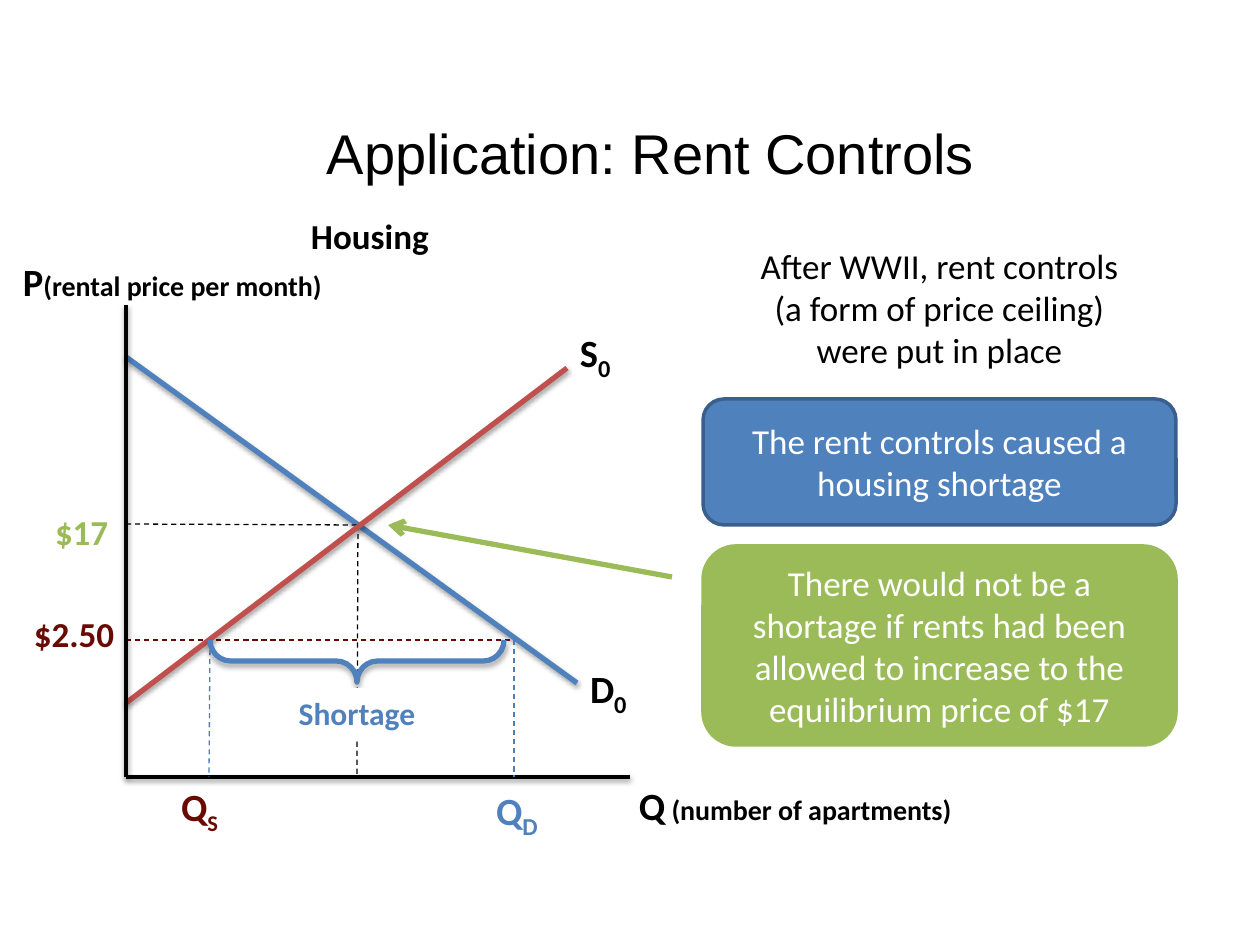
"""Build a slide on rent controls with a supply and demand diagram."""
from lxml.etree import SubElement
from pptx import Presentation
from pptx.dml.color import RGBColor
from pptx.enum.dml import MSO_LINE_DASH_STYLE as Dash
from pptx.enum.shapes import MSO_CONNECTOR as Link, MSO_SHAPE as Shape
from pptx.enum.text import MSO_ANCHOR as Anchor, MSO_AUTO_SIZE as Fit, PP_ALIGN as Align
from pptx.oxml.ns import qn
from pptx.util import Pt

PX = 914400 / 126
BLACK, WHITE, BLUE, DASH_BLUE = "000000", "FFFFFF", "4F81BD", "4B7EBC"
RED, MAROON, GREEN, NAVY = "C0504D", "690A03", "9BBB59", "3A5F8C"
rgb = RGBColor.from_string

deck = Presentation()
deck.slide_width, deck.slide_height = int(1260 * PX), int(945 * PX)
slide = deck.slides.add_slide(deck.slide_layouts[6])
shapes = slide.shapes


def put_text(text, box=None, holder=None, size=20, color=BLACK, font="Calibri", bold=False,
             align=Align.LEFT, anchor=Anchor.TOP, margin=13, tail="", tail_size=None, sub=False):
    if holder is None:
        holder = shapes.add_textbox(*[int(v * PX) for v in box])
    frame = holder.text_frame
    frame.word_wrap = True
    frame.auto_size = Fit.SHAPE_TO_FIT_TEXT if anchor == Anchor.TOP else Fit.NONE
    frame.vertical_anchor = anchor
    frame.margin_left = frame.margin_right = int(margin * PX)
    paragraph = frame.paragraphs[0]
    paragraph.alignment = align
    for part, points in ((text, size), (tail, tail_size or size)):
        if part:
            run = paragraph.add_run()
            run.text = part
            run.font.name, run.font.size, run.font.bold = font, Pt(points), bold
            run.font.color.rgb = rgb(color)
            if sub and part == tail:
                run._r.get_or_add_rPr().set("baseline", "-25000")


def set_effect(shape, opacity=0, distance=1.6):
    effects = SubElement(shape._element.spPr, qn("a:effectLst"))
    if opacity:
        shadow = SubElement(effects, qn("a:outerShdw"), blurRad=str(Pt(3.1)),
                            dist=str(Pt(distance)), dir="5400000", rotWithShape="0")
        tint = SubElement(shadow, qn("a:srgbClr"), val=BLACK)
        SubElement(tint, qn("a:alpha"), val=str(opacity * 1000))


for start_x, start_y, end_x, end_y, color, width, style in (
    (126, 777, 630, 777, BLACK, 2, "shadow"),
    (126, 357, 577, 683, BLUE, 3, "shadow"),
    (126, 640, 514, 640, MAROON, 0.75, "dash"),
    (126, 524, 357, 525, BLACK, 0.75, "dash"),
    (358, 525, 357, 777, BLACK, 0.75, "dash"),
    (210, 641, 209, 777, DASH_BLUE, 0.75, "dash"),
    (514, 640, 514, 777, DASH_BLUE, 0.75, "dash"),
    (672, 577, 388, 525, GREEN, 3, "arrow"),
    (126, 703, 567, 368, RED, 3, "shadow"),
    (126, 305, 126, 777, BLACK, 2, "shadow"),
):
    ends = [int(v * PX) for v in (start_x, start_y, end_x, end_y)]
    stroke = shapes.add_connector(Link.STRAIGHT, *ends)
    stroke.line.color.rgb, stroke.line.width = rgb(color), Pt(width)
    if style == "dash":
        stroke.line.dash_style = Dash.DASH
    if style == "arrow":
        SubElement(stroke.line._get_or_add_ln(), qn("a:tailEnd"), type="arrow")
    set_effect(stroke, 38 if style == "shadow" else 0)

brace = shapes.add_shape(Shape.LEFT_BRACE, *[int(v * PX) for v in (336, 514, 42, 294)])
brace.rotation = 270
brace.adjustments[0] = 0.49
brace.fill.background()
brace.line.color.rgb, brace.line.width = rgb(BLUE), Pt(3)
set_effect(brace, 35, 1.8)

for kind, box, fill, edge, text, style in (
    (Shape.RECTANGLE, (273, 688, 168, 50), WHITE, None, "Shortage",
     dict(size=18, color=BLUE, bold=True)),
    (Shape.ROUNDED_RECTANGLE, (703, 399, 473, 126), BLUE, NAVY,
     "The rent controls caused a housing shortage", dict(color=WHITE, anchor=Anchor.MIDDLE)),
    (Shape.ROUNDED_RECTANGLE, (703, 546, 473, 199), GREEN, GREEN,
     "There would not be a shortage if rents had been allowed to increase to the "
     "equilibrium price of $17", dict(color=WHITE, anchor=Anchor.MIDDLE)),
):
    panel = shapes.add_shape(kind, *[int(v * PX) for v in box])
    panel.shadow.inherit = False
    panel.fill.solid()
    panel.fill.fore_color.rgb = rgb(fill)
    if edge:
        panel.line.color.rgb, panel.line.width = rgb(edge), Pt(2)
    else:
        panel.line.fill.background()
    put_text(text, holder=panel, align=Align.CENTER, **style)

for letter, index, box, color, index_size in (
    ("S", "0", (567, 319, 105, 59), BLACK, 24),
    ("D", "0", (577, 655, 105, 59), BLACK, 24),
    ("Q", "D", (483, 777, 84, 59), BLUE, 24),
    ("Q", "S", (168, 777, 84, 59), MAROON, 22),
):
    put_text(letter, box, size=22, color=color, bold=True,
             tail=index, tail_size=index_size, sub=True)

for axis, meaning, box in (
    ("P", "(rental price per month)", (10, 252, 378, 59)),
    ("Q", " (number of apartments)", (626, 776, 378, 59)),
):
    put_text(axis, box, size=22, bold=True, tail=meaning, tail_size=16)

put_text("$17", (42, 504, 95, 55), color=GREEN, bold=True)
put_text("$2.50", (21, 606, 136, 55), color=MAROON, bold=True)
put_text("Housing", (298, 208, 231, 55), bold=True)
put_text("After WWII, rent controls (a form of price ceiling) were put in place",
         (735, 238, 409, 140), align=Align.CENTER, margin=20)
put_text("Application: Rent Controls", (84, 105, 1134, 95), size=32, font="Arial",
         align=Align.CENTER, anchor=Anchor.MIDDLE)

deck.save("out.pptx")
